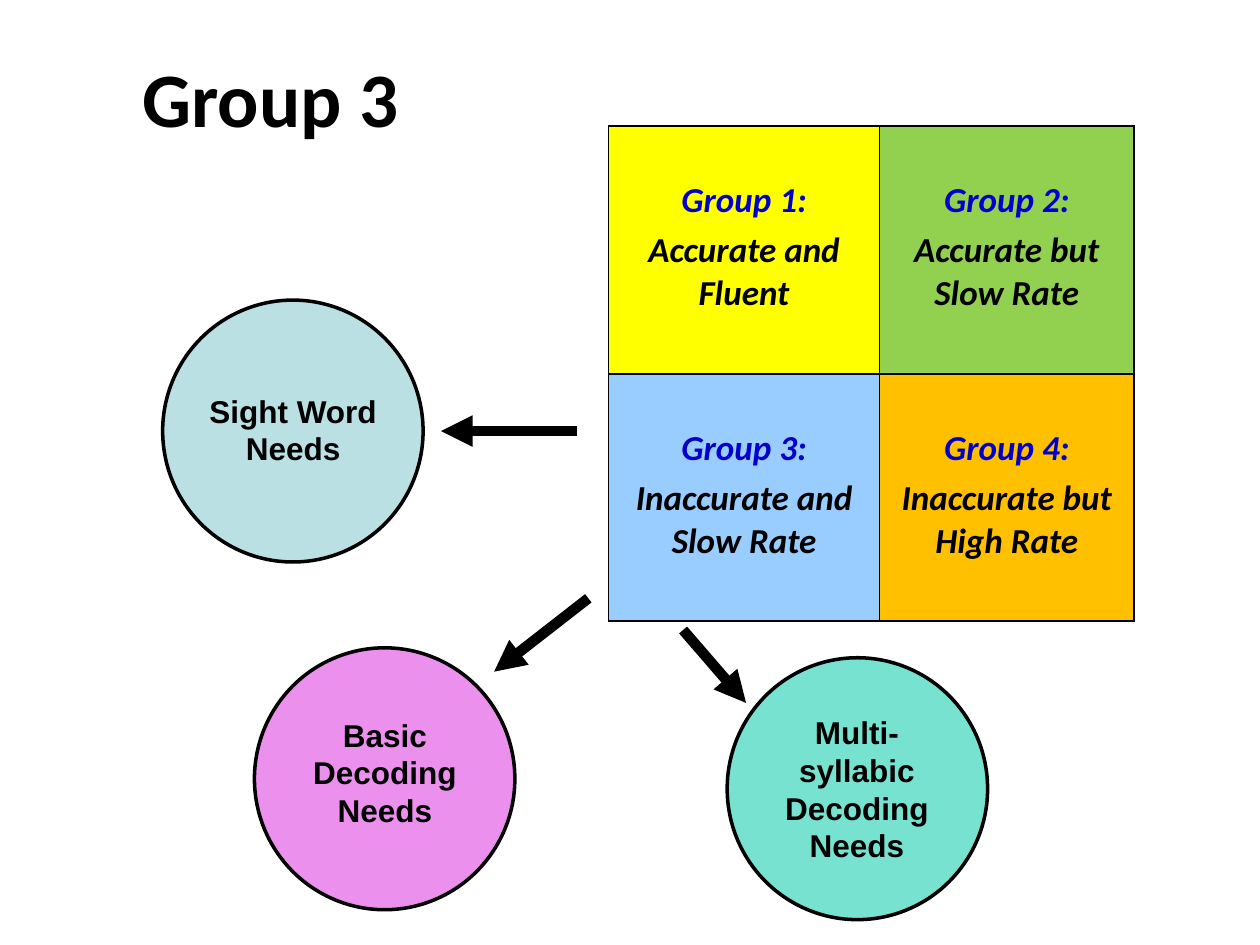
from lxml import etree
from pptx import Presentation
from pptx.dml.color import RGBColor
from pptx.enum.shapes import MSO_CONNECTOR, MSO_SHAPE
from pptx.enum.text import MSO_ANCHOR, MSO_AUTO_SIZE, PP_ALIGN
from pptx.oxml import parse_xml
from pptx.oxml.ns import nsdecls, qn
from pptx.util import Cm, Pt

LINE = MSO_CONNECTOR.STRAIGHT
OVAL = MSO_SHAPE.OVAL
MIDDLE = MSO_ANCHOR.MIDDLE
NO_FIT = MSO_AUTO_SIZE.NONE
LEFT, CENTER = PP_ALIGN.LEFT, PP_ALIGN.CENTER

THEME = {
    "ink": "000000", "label": "0000CC",
    "head": "Calibri", "body": "Arial",
    "title": 44, "cell": 20, "note": 18,
    "rule": 1, "ring": 2, "arrow": 6,
}

TITLE = "Group 3"
GROUPS = [
    [("Group 1:", "Accurate and Fluent", "FFFF00"),
     ("Group 2:", "Accurate but Slow Rate", "92D050")],
    [("Group 3:", "Inaccurate and Slow Rate", "99CCFF"),
     ("Group 4:", "Inaccurate but High Rate", "FFC000")],
]
COLS, ROWS = (5.46, 5.13), (5, 4.98)
ARROWS = [
    (11.63, 8.69, 8.89, 8.69),
    (11.86, 12.06, 9.96, 13.54),
    (13.77, 12.7, 15.04, 14.17),
]
NEEDS = [
    ("Sight Word Needs", "BBE0E3", (3.28, 6.05), (3.94, 7.77, 3.94, 1.8)),
    ("Multi-syllabic Decoding Needs", "78E2D0", (14.66, 13.26), (15.47, 14.25, 3.61, 3.33)),
    ("Basic Decoding Needs", "EC90EE", (5.13, 13.06), (5.92, 14.3, 3.68, 2.57)),
]
DISC = (5.25, 5.28)


def rgb(code):
    return RGBColor.from_string(code)


def cms(*sizes):
    return [Cm(size) for size in sizes]


def write(para, text, font, size, color=THEME["ink"], slant=False, align=CENTER):
    para.alignment = align
    run = para.add_run()
    run.text = text
    run.font.name = font
    run.font.size = Pt(size)
    run.font.bold = True
    run.font.italic = slant
    run.font.color.rgb = rgb(color)


def edge(cell):
    props = cell._tc.get_or_add_tcPr()
    for spot, side in enumerate(("lnL", "lnR", "lnT", "lnB")):
        props.insert(spot, parse_xml(
            f'<a:{side} {nsdecls("a")} w="{Pt(THEME["rule"])}"><a:solidFill>'
            f'<a:srgbClr val="{THEME["ink"]}"/></a:solidFill></a:{side}>'))


def add_title(slide):
    title = slide.shapes.title
    title.left, title.top, title.width, title.height = cms(1.47, 0.46, 9.96, 2.97)
    frame = title.text_frame
    frame.auto_size = NO_FIT
    frame.vertical_anchor = MIDDLE
    frame.margin_left = Cm(1.4)
    write(frame.paragraphs[0], TITLE, THEME["head"], THEME["title"], align=LEFT)


def add_grid(slide):
    place = cms(12.27, 2.54, sum(COLS), sum(ROWS))
    table = slide.shapes.add_table(len(ROWS), len(COLS), *place).table
    table.first_row = table.horz_banding = False
    for col, width in zip(table.columns, COLS):
        col.width = Cm(width)
    for row, height, groups in zip(table.rows, ROWS, GROUPS):
        row.height = Cm(height)
        for cell, (name, trait, color) in zip(row.cells, groups):
            cell.fill.solid()
            cell.fill.fore_color.rgb = rgb(color)
            edge(cell)
            cell.margin_top = Cm(1.07)
            frame = cell.text_frame
            first = frame.paragraphs[0]
            first.space_after = Pt(THEME["cell"] * 0.2)
            write(first, name, THEME["head"], THEME["cell"], THEME["label"], True)
            write(frame.add_paragraph(), trait, THEME["head"], THEME["cell"], slant=True)


def add_arrow(slide, ends):
    arrow = slide.shapes.add_connector(LINE, *cms(*ends))
    arrow.line.color.rgb = rgb(THEME["ink"])
    arrow.line.width = Pt(THEME["arrow"])
    etree.SubElement(arrow.line._get_or_add_ln(), qn("a:tailEnd"), type="triangle")
    etree.SubElement(arrow._element.spPr, qn("a:effectLst"))


def add_need(slide, text, color, spot, box):
    disc = slide.shapes.add_shape(OVAL, *cms(*spot, *DISC))
    disc.shadow.inherit = False
    disc.fill.solid()
    disc.fill.fore_color.rgb = rgb(color)
    disc.line.color.rgb = rgb(THEME["ink"])
    disc.line.width = Pt(THEME["ring"])
    frame = slide.shapes.add_textbox(*cms(*box)).text_frame
    frame.word_wrap = True
    write(frame.paragraphs[0], text, THEME["body"], THEME["note"])


def main():
    deck = Presentation()
    deck.slide_width, deck.slide_height = cms(25.4, 19.05)
    slide = deck.slides.add_slide(deck.slide_layouts[5])
    add_title(slide)
    add_grid(slide)
    for ends in ARROWS:
        add_arrow(slide, ends)
    for need in NEEDS:
        add_need(slide, *need)
    deck.save("out.pptx")


if __name__ == "__main__":
    main()
